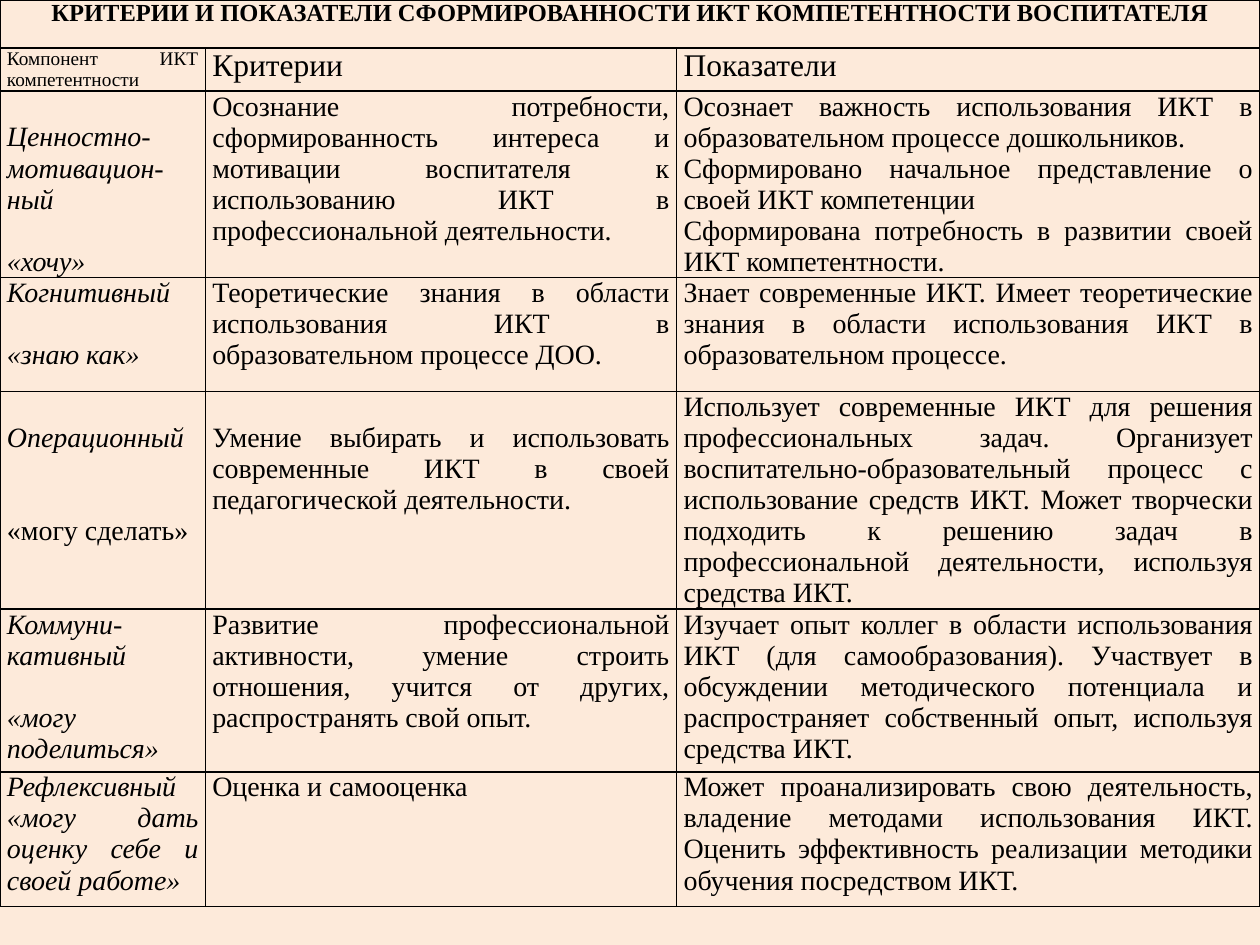
import pptx
import pptx.dml.color
import pptx.enum.text
import pptx.oxml
import pptx.oxml.ns
import pptx.util

Cm = pptx.util.Cm
Pt = pptx.util.Pt
Align = pptx.enum.text.PP_ALIGN

BLACK = pptx.dml.color.RGBColor(0x00, 0x00, 0x00)
PEACH = pptx.dml.color.RGBColor(0xFD, 0xEA, 0xDA)

LINE = 17.7  # height of one body line in points
BODY = {"size": Pt(16), "bold": False, "italic": False}
ITALIC = {**BODY, "italic": True}
TITLE = {**BODY, "size": Pt(14), "bold": True}
SMALL = {**BODY, "size": Pt(11)}
HEADING = {**BODY, "size": Pt(18)}

COLUMN_WIDTHS = [4.14, 9.5, 11.76]
ROW_HEIGHTS = [0.97, 0.84, 3.76, 2.29, 4.39, 3.28, 2.72]

TITLE_TEXT = "КРИТЕРИИ И ПОКАЗАТЕЛИ СФОРМИРОВАННОСТИ ИКТ КОМПЕТЕНТНОСТИ ВОСПИТАТЕЛЯ"
HEADINGS = [("Компонент ИКТ компетентности", SMALL), ("Критерии", HEADING), ("Показатели", HEADING)]

# Component, motto, motto format, lines between them, criterion, indicators,
# lines above the component and above the criterion
COMPONENTS = [
    ("Ценностно-мотивацион-ный", "«хочу»", ITALIC, 1,
     "Осознание потребности, сформированность интереса и мотивации воспитателя "
     "к использованию ИКТ в профессиональной деятельности.",
     ["Осознает важность использования ИКТ в образовательном процессе дошкольников.",
      "Сформировано начальное представление о своей ИКТ компетенции",
      "Сформирована потребность в развитии своей ИКТ компетентности."], 1, 0),
    ("Когнитивный", "«знаю как»", ITALIC, 1,
     "Теоретические знания в области использования ИКТ в образовательном процессе ДОО.",
     ["Знает современные ИКТ. Имеет теоретические знания в области использования "
      "ИКТ в образовательном процессе."], 0, 0),
    ("Операционный", "«могу сделать»", BODY, 2,
     "Умение выбирать и использовать современные ИКТ в своей педагогической деятельности.",
     ["Использует современные ИКТ для решения профессиональных задач. Организует "
      "воспитательно-образовательный процесс с использование средств ИКТ. Может "
      "творчески подходить к решению задач в профессиональной деятельности, "
      "используя средства ИКТ."], 1, 1),
    ("Коммуни-кативный", "«могу поделиться»", ITALIC, 1,
     "Развитие профессиональной активности, умение строить отношения, учится от "
     "других, распространять свой опыт.",
     ["Изучает опыт коллег в области использования ИКТ (для самообразования). "
      "Участвует в обсуждении методического потенциала и распространяет "
      "собственный опыт, используя средства ИКТ."], 0, 0),
    ("Рефлексивный", "«могу дать оценку себе и своей работе»", ITALIC, 0,
     "Оценка и самооценка",
     ["Может проанализировать свою деятельность, владение методами использования "
      "ИКТ. Оценить эффективность реализации методики обучения посредством ИКТ."], 0, 0),
]


class SlideBuilder:
    font_name = "Times New Roman"

    def __init__(self, presentation):
        self.slide = presentation.slides.add_slide(presentation.slide_layouts[6])
        fill = self.slide.background.fill
        fill.solid()
        fill.fore_color.rgb = PEACH

    def add_table(self, widths, heights):
        shape = self.slide.shapes.add_table(
            len(heights), len(widths), Cm(0), Cm(0), Cm(sum(widths)), Cm(sum(heights)))
        table = shape.table
        table.first_row = table.horz_banding = False
        for column, width in zip(table.columns, widths):
            column.width = Cm(width)
        for row, height in zip(table.rows, heights):
            row.height = Cm(height)
        for cell in table.iter_cells():
            cell.fill.background()
            self.add_borders(cell)
        return table

    def add_borders(self, cell):
        properties = cell._tc.get_or_add_tcPr()
        for index, side in enumerate(("lnL", "lnR", "lnT", "lnB")):
            properties.insert(index, pptx.oxml.parse_xml(
                f'<a:{side} {pptx.oxml.ns.nsdecls("a")} w="{Pt(1)}"><a:solidFill>'
                f'<a:srgbClr val="{BLACK}"/></a:solidFill></a:{side}>'))

    def fill_cell(self, cell, paragraphs, alignment=Align.JUSTIFY, lines_above=0):
        """Each paragraph is (text, format, empty lines before it)."""
        margins = {"margin_left": Cm(0.14), "margin_right": Cm(0.14),
                   "margin_top": Pt(lines_above * LINE), "margin_bottom": Cm(0)}
        for name, value in margins.items():
            setattr(cell, name, value)
        frame = cell.text_frame
        for index, (text, text_format, gap) in enumerate(paragraphs):
            paragraph = frame.add_paragraph() if index else frame.paragraphs[0]
            paragraph.alignment = alignment
            if gap:
                paragraph.space_before = Pt(gap * LINE)
            run = paragraph.add_run()
            run.text = text
            for name, value in {"name": self.font_name, **text_format}.items():
                setattr(run.font, name, value)
            run.font.color.rgb = BLACK


def main():
    presentation = pptx.Presentation()
    presentation.slide_width = Cm(25.4)
    presentation.slide_height = Cm(19.05)
    builder = SlideBuilder(presentation)
    table = builder.add_table(COLUMN_WIDTHS, ROW_HEIGHTS)

    # Title across all columns
    table.cell(0, 0).merge(table.cell(0, 2))
    builder.fill_cell(table.cell(0, 0), [(TITLE_TEXT, TITLE, 0)], Align.CENTER)

    # Column headings
    for column, (text, text_format) in enumerate(HEADINGS):
        builder.fill_cell(table.cell(1, column), [(text, text_format, 0)])

    # One row for each component
    for row, component in enumerate(COMPONENTS, start=2):
        name, motto, motto_format, gap, criterion, indicators, name_above, criterion_above = component
        builder.fill_cell(table.cell(row, 0), [(name, ITALIC, 0), (motto, motto_format, gap)],
                          lines_above=name_above)
        builder.fill_cell(table.cell(row, 1), [(criterion, BODY, 0)], lines_above=criterion_above)
        builder.fill_cell(table.cell(row, 2), [(text, BODY, 0) for text in indicators])

    presentation.save("out.pptx")


if __name__ == "__main__":
    main()
